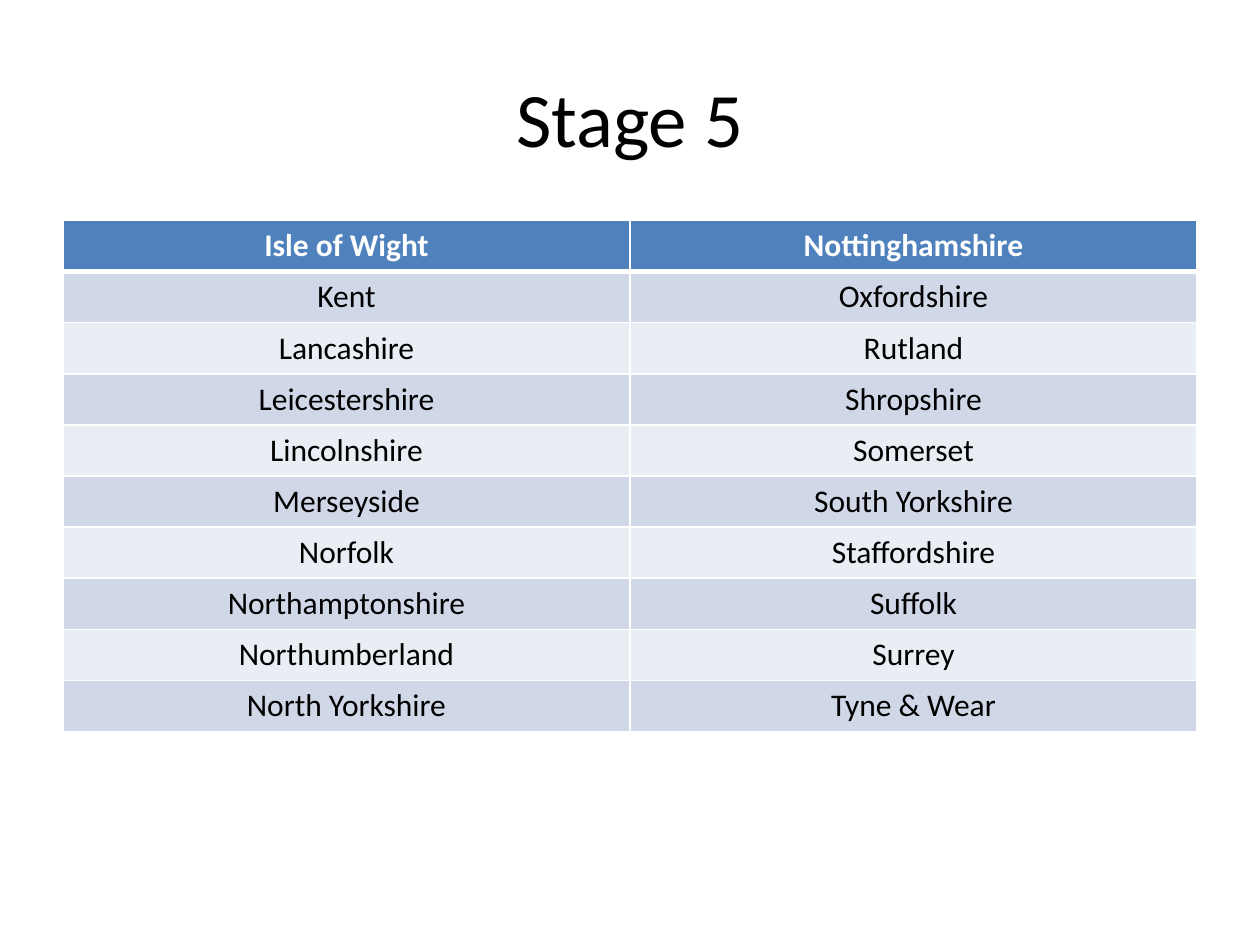
from dataclasses import dataclass

import lxml.etree
import pptx
import pptx.dml.color
import pptx.enum.text
import pptx.oxml.ns
import pptx.util

Pt = pptx.util.Pt
RGBColor = pptx.dml.color.RGBColor

WHITE = RGBColor(0xFF, 0xFF, 0xFF)
BLACK = RGBColor(0x00, 0x00, 0x00)
HEADER_BLUE = RGBColor(0x4F, 0x81, 0xBD)
BAND_DARK = RGBColor(0xD0, 0xD8, 0xE8)
BAND_LIGHT = RGBColor(0xE9, 0xED, 0xF4)

FONT = "Calibri"
MARGIN = 36
TABLE_TOP = 126
TABLE_WIDTH = 648
ROW_HEIGHT = 29.2


@dataclass(frozen=True)
class RowStyle:
    fill: RGBColor
    color: RGBColor = BLACK
    bold: bool = False
    top_border: float = 1
    bottom_border: float = 1


HEADER = RowStyle(HEADER_BLUE, color=WHITE, bold=True, bottom_border=3)
FIRST_BAND = RowStyle(BAND_DARK, top_border=3)
BANDS = (RowStyle(BAND_LIGHT), RowStyle(BAND_DARK))

COUNTIES = [
    ("Isle of Wight", "Nottinghamshire"),
    ("Kent", "Oxfordshire"),
    ("Lancashire", "Rutland"),
    ("Leicestershire", "Shropshire"),
    ("Lincolnshire", "Somerset"),
    ("Merseyside", "South Yorkshire"),
    ("Norfolk", "Staffordshire"),
    ("Northamptonshire", "Suffolk"),
    ("Northumberland", "Surrey"),
    ("North Yorkshire", "Tyne & Wear"),
]


def write_text(text_frame, text: str, *, size: float, color: RGBColor, bold: bool = False) -> None:
    paragraph = text_frame.paragraphs[0]
    paragraph.alignment = pptx.enum.text.PP_ALIGN.CENTER
    run = paragraph.add_run()
    run.text = text
    run.font.name = FONT
    run.font.size = Pt(size)
    run.font.bold = bold
    run.font.color.rgb = color


def add_border(cell, side: str, width: float) -> None:
    qn = pptx.oxml.ns.qn
    properties = cell._tc.get_or_add_tcPr()
    line = lxml.etree.SubElement(properties, qn(f"a:{side}"), w=str(Pt(width)))
    fill = lxml.etree.SubElement(line, qn("a:solidFill"))
    lxml.etree.SubElement(fill, qn("a:srgbClr"), val=str(WHITE))


def row_style(index: int) -> RowStyle:
    if index == 0:
        return HEADER
    return FIRST_BAND if index == 1 else BANDS[index % 2]


def draw_cell(cell, text: str, style: RowStyle) -> None:
    add_border(cell, "lnL", 1)
    add_border(cell, "lnR", 1)
    add_border(cell, "lnT", style.top_border)
    add_border(cell, "lnB", style.bottom_border)
    cell.fill.solid()
    cell.fill.fore_color.rgb = style.fill
    write_text(cell.text_frame, text, size=18, color=style.color, bold=style.bold)


def draw_title(slide, text: str) -> None:
    title = slide.shapes.title
    title.left, title.top = Pt(MARGIN), Pt(21.6)
    title.width, title.height = Pt(TABLE_WIDTH), Pt(90)
    title.text_frame.vertical_anchor = pptx.enum.text.MSO_ANCHOR.MIDDLE
    write_text(title.text_frame, text, size=44, color=BLACK)


def draw_table(slide, rows: list[tuple[str, str]]) -> None:
    table = slide.shapes.add_table(
        len(rows), len(rows[0]), Pt(MARGIN), Pt(TABLE_TOP),
        Pt(TABLE_WIDTH), Pt(ROW_HEIGHT * len(rows)),
    ).table
    for row_index, names in enumerate(rows):
        table.rows[row_index].height = Pt(ROW_HEIGHT)
        for column_index, name in enumerate(names):
            draw_cell(table.cell(row_index, column_index), name, row_style(row_index))


def main() -> None:
    presentation = pptx.Presentation()
    presentation.slide_width, presentation.slide_height = Pt(720), Pt(540)
    slide = presentation.slides.add_slide(presentation.slide_layouts[5])
    draw_title(slide, "Stage 5")
    draw_table(slide, COUNTIES)
    presentation.save("out.pptx")


if __name__ == "__main__":
    main()
